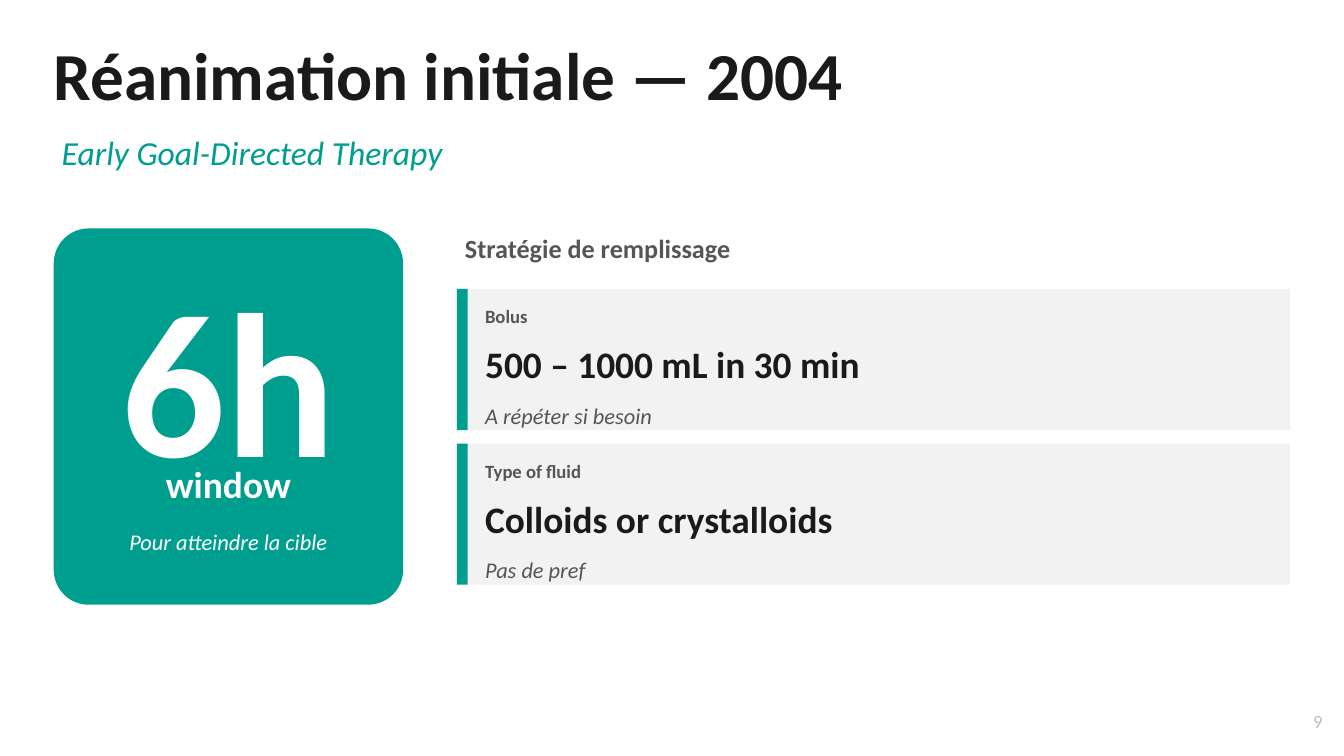
import pptx
import pptx.util
import pptx.dml.color
import pptx.enum.shapes
import pptx.enum.text

KIND = pptx.enum.shapes.MSO_SHAPE
ALIGN = pptx.enum.text.PP_ALIGN
FIT = pptx.enum.text.MSO_AUTO_SIZE

THEME = {
    "font": "Calibri",
    "teal": "009E8E", "ink": "1A1A1A", "gray": "555555",
    "pale": "F2F2F2", "white": "FFFFFF", "faint": "C0C0C0",
    "title": 36, "sub": 18, "huge": 110, "main": 20,
    "head": 14, "note": 12, "label": 10,
}

deck = pptx.Presentation()
deck.slide_width = pptx.util.Inches(10)
deck.slide_height = deck.slide_width * 9 // 16
slide = deck.slides.add_slide(deck.slide_layouts[6])

# Square grid: 100 columns across the slide, rows of the same size.
CELL = deck.slide_width // 100


def write(text, col, row, wide, high, size, color, bold=False, slant=False,
          align=ALIGN.LEFT, wrap=True, pad=(0.6, 0.3)):
    box = slide.shapes.add_textbox(*(round(n * CELL) for n in (col, row, wide, high)))
    frame = box.text_frame
    frame.word_wrap = wrap
    frame.auto_size = FIT.SHAPE_TO_FIT_TEXT
    frame.margin_left = frame.margin_right = round(pad[0] * CELL)
    frame.margin_top = frame.margin_bottom = round(pad[1] * CELL)
    line = frame.paragraphs[0]
    line.alignment = align
    run = line.add_run()
    run.text = text
    run.font.name = THEME["font"]
    run.font.size = pptx.util.Pt(THEME[size])
    run.font.bold = bold
    run.font.italic = slant
    run.font.color.rgb = pptx.dml.color.RGBColor.from_string(THEME[color])


def block(kind, col, row, wide, high, color):
    shape = slide.shapes.add_shape(kind, *(round(n * CELL) for n in (col, row, wide, high)))
    shape.shadow.inherit = False
    shape.fill.solid()
    shape.fill.fore_color.rgb = pptx.dml.color.RGBColor.from_string(THEME[color])
    shape.line.fill.background()
    return shape


LEFT, TOP, SIDE = 4, 17, 26      # left margin, body top, width of the teal panel
RIGHT, WIDE = 34, 62             # card column

# Heading
write("Réanimation initiale — 2004", LEFT, 2.5, 59.4, 6.1, "title", "ink",
      bold=True, wrap=False, pad=(0, 0))
write("Early Goal-Directed Therapy", LEFT, 9.5, 70, 4, "sub", "teal", slant=True)

# Time panel
panel = block(KIND.ROUNDED_RECTANGLE, LEFT, TOP, SIDE, 28, "teal")
panel.adjustments[0] = 0.1
for text, row, high, size, bold in (
    ("6h", 18.5, 16, "huge", True),
    ("window", 34, 5, "main", True),
    ("Pour atteindre la cible", 39, 2.6, "note", False),
):
    write(text, LEFT, row, SIDE, high, size, "white",
          bold=bold, slant=not bold, align=ALIGN.CENTER)

# Fluid cards
write("Stratégie de remplissage", RIGHT, TOP, WIDE, 2.9, "head", "gray", bold=True)
FIRST, TALL, GAP = 21.5, 10.5, 1
cards = (
    ("Bolus", "500 – 1000 mL in 30 min", "A répéter si besoin"),
    ("Type of fluid", "Colloids or crystalloids", "Pas de pref"),
)
for index, (label, value, note) in enumerate(cards):
    row = FIRST + index * (TALL + GAP)
    col, span = RIGHT + 1.5, WIDE - 1.6
    block(KIND.RECTANGLE, RIGHT, row, WIDE, TALL, "pale")
    block(KIND.RECTANGLE, RIGHT, row, 0.8, TALL, "teal")
    write(label, col, row + 0.9, span, 3, "label", "gray", bold=True)
    write(value, col, row + 3.6, span, 5, "main", "ink", bold=True)
    write(note, col, row + 8.1, span, 2.6, "note", "gray", slant=True)

# Page number
write("9", 96, 52.5, 3, 3, "label", "faint", align=ALIGN.RIGHT)

deck.save("out.pptx")
